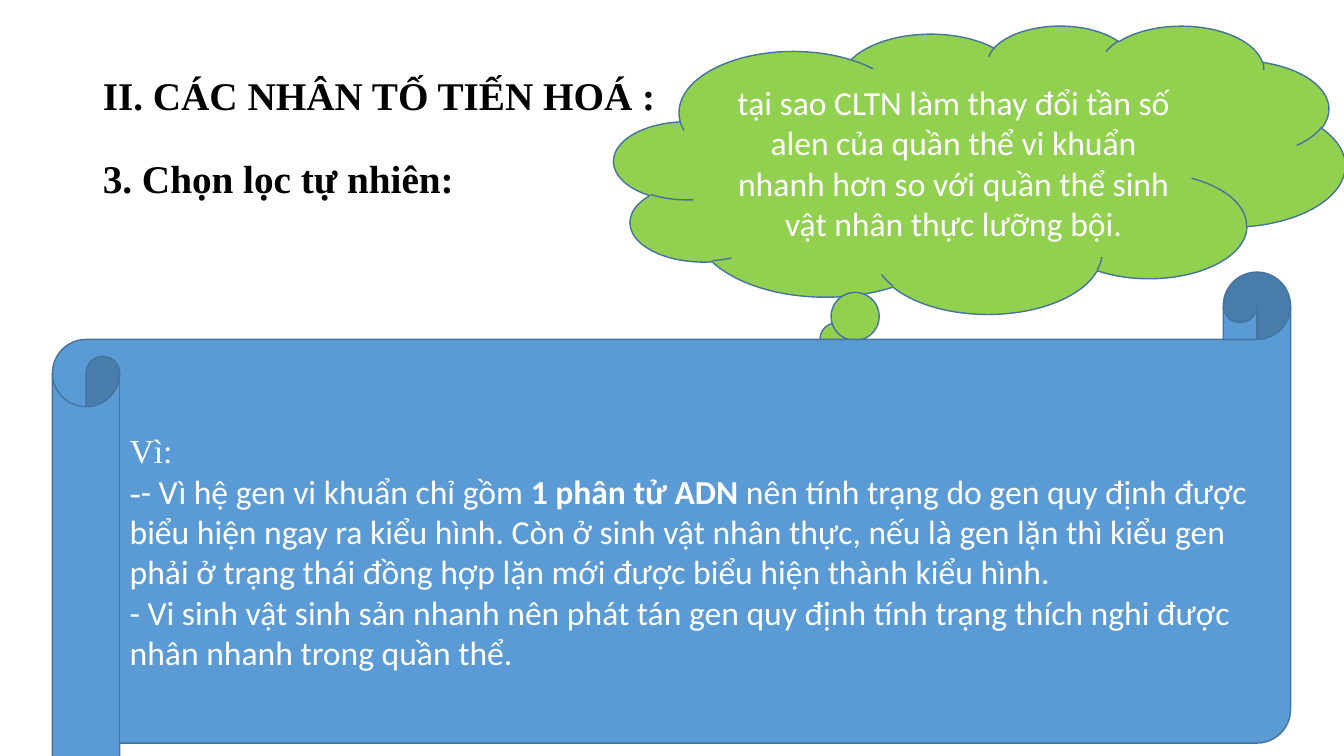
import pptx
import pptx.util
import pptx.dml.color
import pptx.enum.shapes
import pptx.enum.text
import lxml.etree
from pptx.util import Inches

RGBColor = pptx.dml.color.RGBColor
BLACK = RGBColor(0x00, 0x00, 0x00)
WHITE = RGBColor(0xFF, 0xFF, 0xFF)
GREEN = RGBColor(0x92, 0xD0, 0x50)
BLUE = RGBColor(0x5B, 0x9B, 0xD5)
OUTLINE = RGBColor(0x43, 0x73, 0x9E)
SERIF, SANS = "Times New Roman", "Calibri"
ALIGN = pptx.enum.text.PP_ALIGN
SHAPE = pptx.enum.shapes.MSO_SHAPE
MIDDLE = pptx.enum.text.MSO_ANCHOR.MIDDLE

deck = pptx.Presentation()
deck.slide_width, deck.slide_height = Inches(13.33), Inches(7.5)
slide = deck.slides.add_slide(deck.slide_layouts[1])


def format_font(font, name, size, color, bold=False):
    font.name, font.size, font.bold = name, pptx.util.Pt(size), bold
    font.color.rgb = color


def add_panel(kind, left, top, width, height, fill):
    panel = slide.shapes.add_shape(
        kind, Inches(left), Inches(top), Inches(width), Inches(height))
    panel.shadow.inherit = False
    panel.fill.solid()
    panel.fill.fore_color.rgb = fill
    panel.line.color.rgb = OUTLINE
    panel.line.width = pptx.util.Pt(1)
    panel.text_frame.word_wrap = True
    panel.text_frame.vertical_anchor = MIDDLE
    return panel


# Section title and subheading
section, subheading = slide.shapes.title, slide.placeholders[1]
for heading, text, top, height, align in (
        (section, "II. CÁC NHÂN TỐ TIẾN HOÁ :", 0.4, 0.85, ALIGN.LEFT),
        (subheading, "3. Chọn lọc tự nhiên:", 1.25, 4.76, ALIGN.JUSTIFY)):
    heading.left, heading.top = Inches(0.92), Inches(top)
    heading.width, heading.height = Inches(11.5), Inches(height)
    heading.text_frame.text = text
    heading.text_frame.auto_size = pptx.enum.text.MSO_AUTO_SIZE.NONE
    line = heading.text_frame.paragraphs[0]
    line.alignment, line.line_spacing = align, 1.5
    format_font(line.font, SERIF, 28, BLACK, True)
section.text_frame.vertical_anchor = MIDDLE

# Subheading without bullet or indent
line.space_before = pptx.util.Pt(10)
bullet_props = line._p.get_or_add_pPr()
bullet_props.set("marL", "0")
bullet_props.set("indent", "0")
no_bullet = pptx.oxml.ns.qn("a:buNone")
lxml.etree.SubElement(bullet_props, no_bullet)
bullet_props.remove(bullet_props.find(no_bullet))
bullet_props.insert_element_before(
    bullet_props.makeelement(no_bullet, {}), "a:tabLst", "a:defRPr", "a:extLst")

# Question cloud
question = add_panel(SHAPE.CLOUD_CALLOUT, 6.09, 0.25, 7.25, 2.86, GREEN)
question.text_frame.text = (
    "tại sao CLTN làm thay đổi tần số alen của quần thể vi khuẩn nhanh hơn "
    "so với quần thể sinh vật nhân thực lưỡng bội.")
question_text = question.text_frame.paragraphs[0]
question_text.alignment = ALIGN.CENTER
format_font(question_text.font, SANS, 24, WHITE)

# Answer scroll: each paragraph is a list of (text, font, bold)
answer = add_panel(SHAPE.HORIZONTAL_SCROLL, 0.52, 2.7, 12.28, 5.34, BLUE)
reasons = [
    [("Vì:", SERIF, False)],
    [("-", SERIF, False),
     ("-\u00a0Vì hệ gen vi khuẩn chỉ gồm ", SANS, False),
     ("1 phân tử ADN ", SANS, True),
     ("nên tính trạng do gen quy định được biểu hiện ngay ra kiểu hình.\u00a0"
      "Còn ở sinh vật nhân thực, nếu là gen lặn thì kiểu gen phải ở trạng thái "
      "đồng hợp lặn mới được biểu hiện thành kiểu hình.", SANS, False)],
    [("-\u00a0Vi sinh vật sinh sản nhanh nên phát tán gen quy định tính trạng "
      "thích nghi được nhân nhanh trong quần thể.", SANS, False)],
]
answer_frame = answer.text_frame
for number, reason in enumerate(reasons):
    paragraph = answer_frame.add_paragraph() if number else answer_frame.paragraphs[0]
    paragraph.alignment = ALIGN.LEFT
    for text, face, bold in reason:
        phrase = paragraph.add_run()
        phrase.text = text
        format_font(phrase.font, face, 24, WHITE, bold)
answer_frame.paragraphs[0].line_spacing = 1.5

deck.save("out.pptx")
